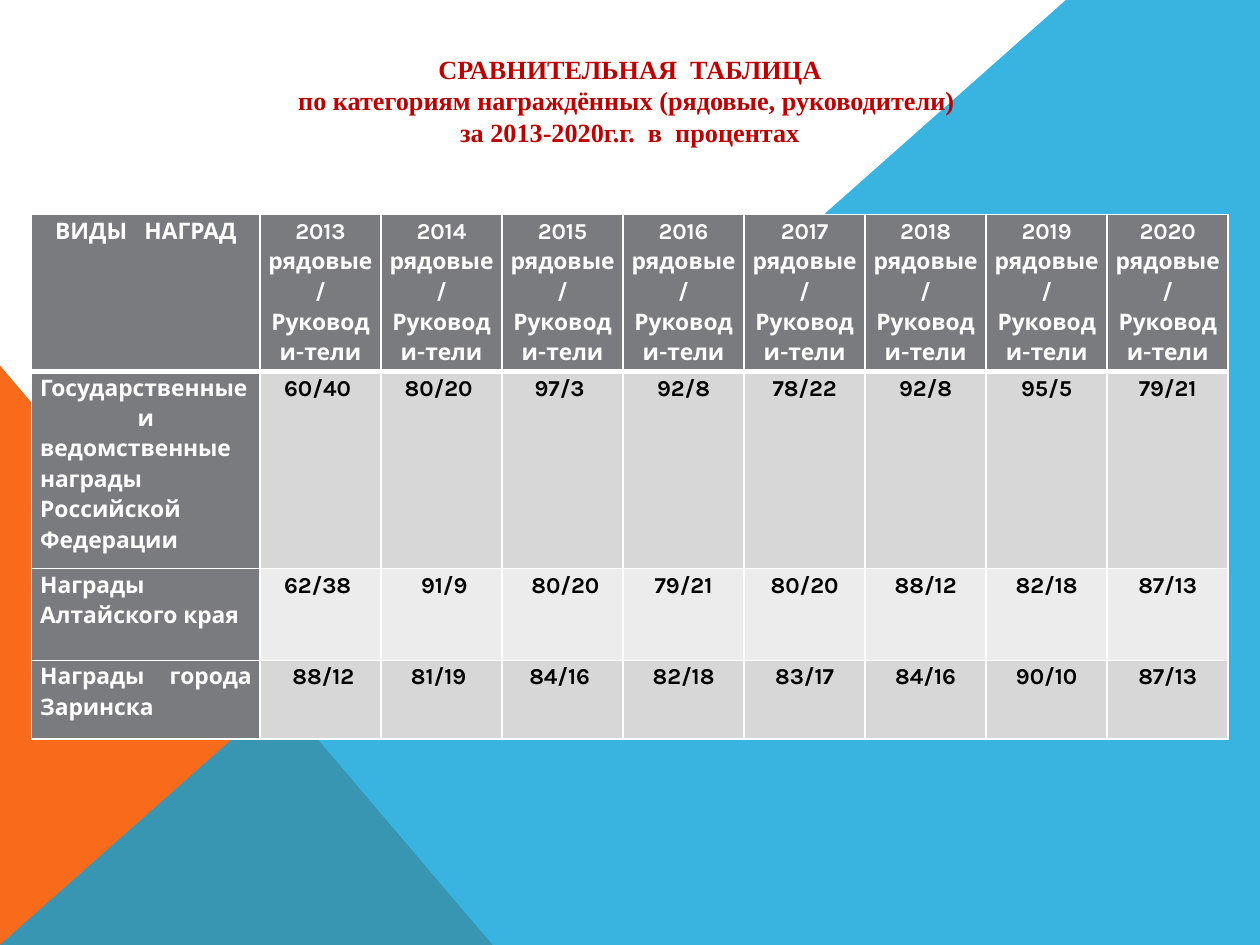
from lxml import etree
from pptx import Presentation
from pptx.dml.color import RGBColor
from pptx.enum import shapes, text
from pptx.oxml import ns
from pptx.util import Cm, Pt

WHITE, GREY, BLACK = "FFFFFF", "797B7E", "000000"


def paint(fill, color):
    fill.solid()
    fill.fore_color.rgb = RGBColor.from_string(color)


def add_borders(cell, widths):
    properties = cell._tc.get_or_add_tcPr()
    for side, width in widths.items():
        line = etree.SubElement(properties, ns.qn(f"a:ln{side}"), w=str(Pt(width)))
        solid = etree.SubElement(line, ns.qn("a:solidFill"))
        etree.SubElement(solid, ns.qn("a:srgbClr"), val=WHITE)


presentation = Presentation()
presentation.slide_width, presentation.slide_height = Cm(25.4), Cm(19.05)
slide = presentation.slides.add_slide(presentation.slide_layouts[6])

# Background: orange triangle under a translucent blue area
triangle = slide.shapes.add_shape(
    shapes.MSO_SHAPE.RIGHT_TRIANGLE, Cm(0), Cm(7.37), Cm(9.93), Cm(11.68))
builder = slide.shapes.build_freeform(Cm(0), Cm(19.05))
builder.add_line_segments(
    [(Cm(x), Cm(y)) for x, y in [(21.49, 0), (25.4, 0), (25.4, 19.05)]], close=True)
blue_area = builder.convert_to_shape()
for shape, color in [(triangle, "F96A1B"), (blue_area, "08A1D9")]:
    shape.shadow.inherit = False
    paint(shape.fill, color)
    shape.line.fill.background()
blue = blue_area._element.spPr.find(".//" + ns.qn("a:srgbClr"))
etree.SubElement(blue, ns.qn("a:alpha"), val="80000")

# Awards table
years = range(2013, 2021)
rows = [
    ["ВИДЫ   НАГРАД"] + [f"{year}\nрядовые/\nРуководи-тели" for year in years],
    ["Государственные  и  ведомственные награды  Российской Федерации",
     "60/40 ", "80/20 ", "97/3 ", "92/8", "78/22", "92/8", "95/5", "79/21"],
    ["Награды Алтайского края",
     "62/38 ", " 91/9", " 80/20", "79/21", "80/20", "88/12", "82/18", "87/13"],
    ["Награды города Заринска",
     " 88/12", "81/19 ", "84/16 ", "82/18", "83/17", "84/16", "90/10", "87/13"],
]
row_heights = [3.17, 3.97, 1.85, 1.59]
column_widths = [4.6] + [2.44] * len(years)
table = slide.shapes.add_table(
    len(rows), len(column_widths), Cm(0.64), Cm(4.32),
    Cm(sum(column_widths)), Cm(sum(row_heights))).table
for column, width in zip(table.columns, column_widths):
    column.width = Cm(width)

for i, values in enumerate(rows):
    table.rows[i].height = Cm(row_heights[i])
    for j, value in enumerate(values):
        cell = table.cell(i, j)
        is_heading = i == 0 or j == 0
        add_borders(cell, {"L": 1, "R": 1, "T": 3 if i == 1 else 1, "B": 3 if i == 0 else 1})
        paint(cell.fill, GREY if is_heading else "D7D7D8" if i % 2 else "ECECEC")
        cell.margin_left = cell.margin_right = Cm(0.17)
        cell.margin_top = cell.margin_bottom = 0
        cell.text = value
        for paragraph in cell.text_frame.paragraphs:
            row_label = j == 0 and i > 0
            paragraph.alignment = text.PP_ALIGN.JUSTIFY if row_label else text.PP_ALIGN.CENTER
            paragraph.line_spacing = 1.15
            paragraph.font.name, paragraph.font.size = "Karla", Pt(13)
            paragraph.font.bold = True
            paint(paragraph.font.fill, WHITE if is_heading else BLACK)

# Title
title = slide.shapes.add_textbox(Cm(5.26), Cm(0.89), Cm(14.88), Cm(2.95))
frame = title.text_frame
frame.word_wrap = False
frame.margin_top = Cm(0.18)
frame.text = ("СРАВНИТЕЛЬНАЯ  ТАБЛИЦА\n"
              "по категориям награждённых (рядовые, руководители) \n"
              "за 2013-2020г.г.  в  процентах")
for paragraph in frame.paragraphs:
    paragraph.alignment = text.PP_ALIGN.CENTER
    paragraph.font.name, paragraph.font.size = "Times New Roman", Pt(15)
    paragraph.font.bold = True
    paint(paragraph.font.fill, "C00000")

presentation.save("out.pptx")
